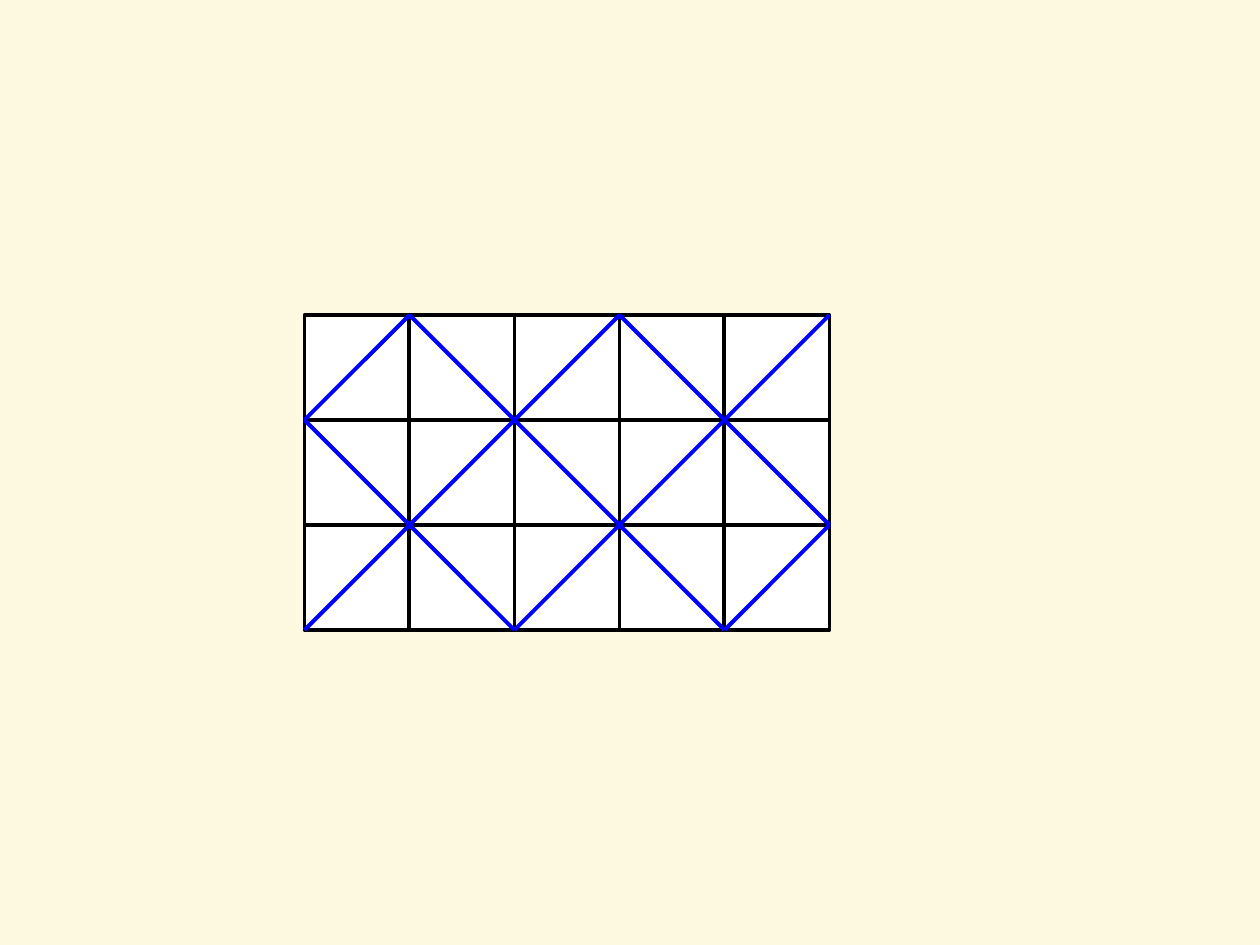
from itertools import pairwise, product

from pptx import Presentation
from pptx.dml.color import RGBColor
from pptx.enum import shapes
from pptx.oxml.ns import qn
from pptx.util import Pt
from lxml import etree

COLUMNS, ROWS = 5, 3
CELL = 60
GRID_LEFT, GRID_TOP = 174, 180
LINE_WIDTH = 2.25

# Corners, as (column, row), where the ball starts, bounces and stops
BOUNCES = [(0, 3), (3, 0), (5, 2), (4, 3), (1, 0), (0, 1), (2, 3), (5, 0)]


def paint(color_format, hex_color):
    color_format.rgb = RGBColor.from_string(hex_color)


def grid_point(column, row):
    return Pt(GRID_LEFT + column * CELL), Pt(GRID_TOP + row * CELL)


def style_line(line, hex_color):
    paint(line.color, hex_color)
    line.width = Pt(LINE_WIDTH)


def add_cell(slide, column, row):
    cell = slide.shapes.add_shape(
        shapes.MSO_SHAPE.RECTANGLE, *grid_point(column, row), Pt(CELL), Pt(CELL))
    cell.shadow.inherit = False
    cell.fill.solid()
    paint(cell.fill.fore_color, "FFFFFF")
    style_line(cell.line, "000000")


def add_path_segment(slide, start, end):
    segment = slide.shapes.add_connector(
        shapes.MSO_CONNECTOR.STRAIGHT, *grid_point(*start), *grid_point(*end))
    style_line(segment.line, "0000FF")
    etree.SubElement(segment._element.spPr, qn("a:effectLst"))


def main():
    presentation = Presentation()
    presentation.slide_width, presentation.slide_height = Pt(720), Pt(540)
    slide = presentation.slides.add_slide(presentation.slide_layouts[6])
    slide.background.fill.solid()
    paint(slide.background.fill.fore_color, "FDF9E0")

    for row, column in product(range(ROWS), range(COLUMNS)):
        add_cell(slide, column, row)
    for start, end in pairwise(BOUNCES):
        add_path_segment(slide, start, end)

    presentation.save("out.pptx")


if __name__ == "__main__":
    main()
